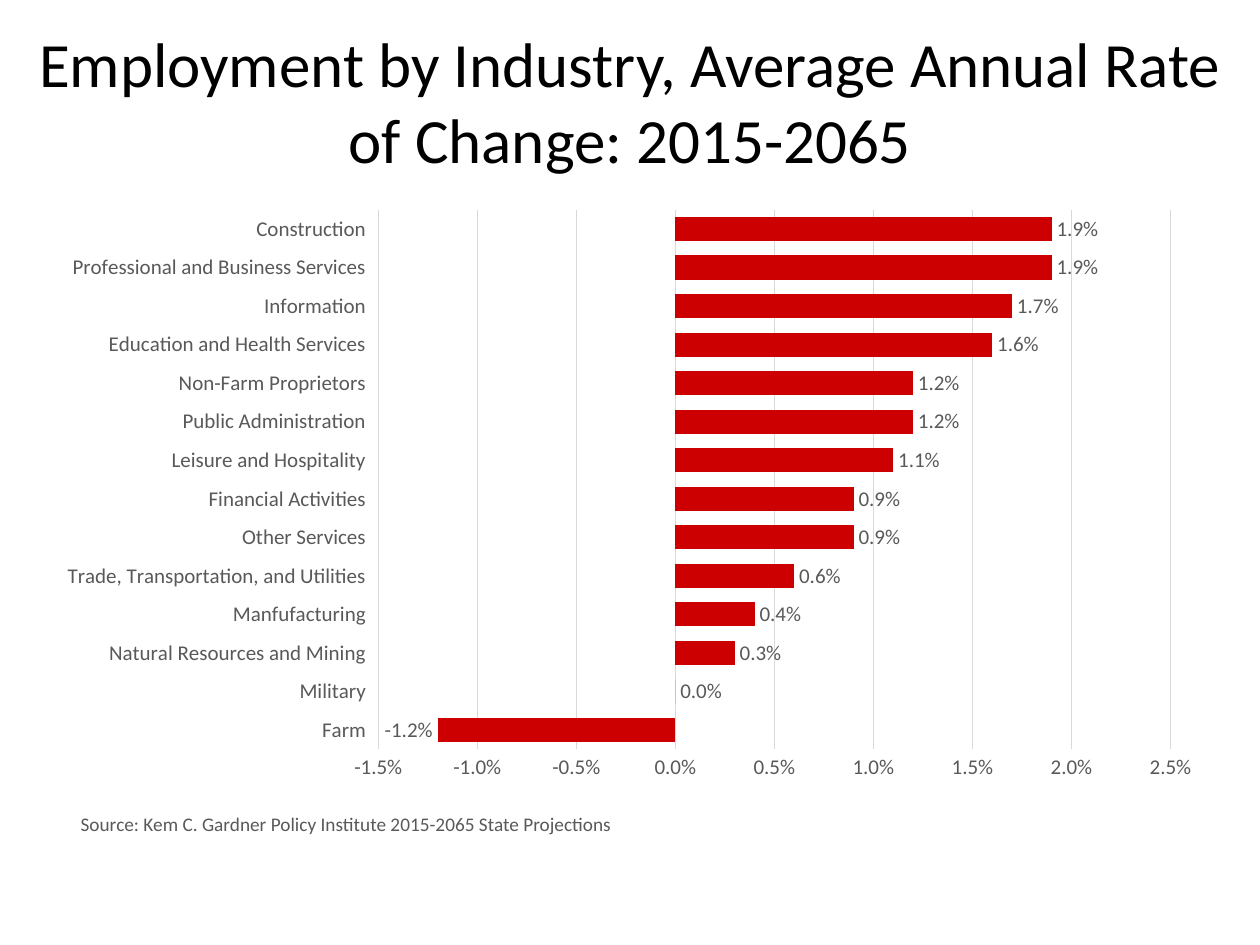
from dataclasses import dataclass

from pptx import Presentation
from pptx.chart.data import CategoryChartData
from pptx.dml.color import RGBColor
from pptx.enum.chart import XL_CHART_TYPE, XL_LABEL_POSITION, XL_TICK_LABEL_POSITION, XL_TICK_MARK
from pptx.enum.text import MSO_ANCHOR, MSO_AUTO_SIZE, PP_ALIGN
from pptx.util import Cm, Pt

BAR_CLUSTERED = XL_CHART_TYPE.BAR_CLUSTERED
OUTSIDE_END = XL_LABEL_POSITION.OUTSIDE_END
LABELS_LOW = XL_TICK_LABEL_POSITION.LOW
NO_TICK = XL_TICK_MARK.NONE
MIDDLE = MSO_ANCHOR.MIDDLE
NO_FIT = MSO_AUTO_SIZE.NONE
CENTER = PP_ALIGN.CENTER
TITLE_ONLY = 5
PERCENT = "0.0%"

GROWTH = {
    "Farm": -0.012,
    "Military": 0,
    "Natural Resources and Mining": 0.003,
    "Manfufacturing": 0.004,
    "Trade, Transportation, and Utilities": 0.006,
    "Other Services": 0.009,
    "Financial Activities": 0.009,
    "Leisure and Hospitality": 0.011,
    "Public Administration": 0.012,
    "Non-Farm Proprietors": 0.012,
    "Education and Health Services": 0.016,
    "Information": 0.017,
    "Professional and Business Services": 0.019,
    "Construction": 0.019,
}


@dataclass(frozen=True)
class Theme:
    font: str = "Calibri"
    title_color: RGBColor = RGBColor(0, 0, 0)
    text_color: RGBColor = RGBColor(0x59, 0x59, 0x59)
    bar_color: RGBColor = RGBColor(0xCC, 0, 0)
    grid_color: RGBColor = RGBColor(0xD9, 0xD9, 0xD9)
    title_size: int = 36
    chart_size: int = 12
    source_size: int = 11
    line_width: float = 0.75


def format_font(font, name, size, color):
    font.name = name
    font.size = Pt(size)
    font.bold = False
    font.color.rgb = color


def write_text(frame, text, *, font, size, color, align=CENTER, wrap=True, anchor=None):
    frame.word_wrap = wrap
    frame.auto_size = NO_FIT
    if anchor is not None:
        frame.vertical_anchor = anchor
    para = frame.paragraphs[0]
    para.alignment = align
    span = para.add_run()
    span.text = text
    format_font(span.font, font, size, color)


class SlideBuilder:
    """Adds styled elements to the current slide."""

    def __init__(self, deck, theme):
        self.theme = theme
        self.page = deck.slides.add_slide(deck.slide_layouts[TITLE_ONLY])

    def title(self, text, left, top, width, height):
        box = self.page.shapes.title
        box.left, box.top, box.width, box.height = Cm(left), Cm(top), Cm(width), Cm(height)
        write_text(box.text_frame, text, font=self.theme.font, size=self.theme.title_size,
                   color=self.theme.title_color, anchor=MIDDLE)

    def source(self, text, left, top, width, height):
        box = self.page.shapes.add_textbox(Cm(left), Cm(top), Cm(width), Cm(height))
        write_text(box.text_frame, text, font=self.theme.font, size=self.theme.source_size,
                   color=self.theme.text_color, wrap=False)

    def grid_line(self, line):
        line.color.rgb = self.theme.grid_color
        line.width = Pt(self.theme.line_width)

    def bar_chart(self, values, left, top, width, height):
        data = CategoryChartData(number_format=PERCENT)
        data.categories = list(values)
        data.add_series("Series 1", list(values.values()))
        chart = self.page.shapes.add_chart(
            BAR_CLUSTERED, Cm(left), Cm(top), Cm(width), Cm(height), data).chart
        chart.has_legend = False
        chart.has_title = False
        text_style = (self.theme.font, self.theme.chart_size, self.theme.text_color)
        format_font(chart.font, *text_style)

        plot = chart.plots[0]
        plot.gap_width = 60
        plot.vary_by_categories = False
        bars = plot.series[0]
        bars.invert_if_negative = False
        bars.format.fill.solid()
        bars.format.fill.fore_color.rgb = self.theme.bar_color

        labels = bars.data_labels
        labels.show_value = True
        labels.position = OUTSIDE_END
        labels.number_format = PERCENT
        labels.number_format_is_linked = False

        for axis in (chart.category_axis, chart.value_axis):
            axis.major_tick_mark = NO_TICK
            axis.minor_tick_mark = NO_TICK
        for styled in (labels, chart.category_axis.tick_labels, chart.value_axis.tick_labels):
            format_font(styled.font, *text_style)

        chart.category_axis.tick_label_position = LABELS_LOW
        self.grid_line(chart.category_axis.format.line)
        scale = chart.value_axis
        scale.minimum_scale, scale.maximum_scale, scale.major_unit = -0.015, 0.025, 0.005
        scale.tick_labels.number_format = PERCENT
        scale.tick_labels.number_format_is_linked = False
        scale.format.line.fill.background()
        scale.has_major_gridlines = True
        self.grid_line(scale.major_gridlines.format.line)


def main():
    deck = Presentation()
    deck.slide_width, deck.slide_height = Cm(25.4), Cm(19.05)
    slide = SlideBuilder(deck, Theme())
    slide.title("Employment by Industry, Average Annual Rate of Change: 2015-2065",
                0, 0.36, 25.4, 3.33)
    slide.bar_chart(GROWTH, 0.89, 3.99, 23.6, 11.96)
    slide.source("Source: Kem C. Gardner Policy Institute 2015-2065 State Projections",
                 1.24, 16.26, 11.48, 0.74)
    deck.save("out.pptx")


if __name__ == "__main__":
    main()
